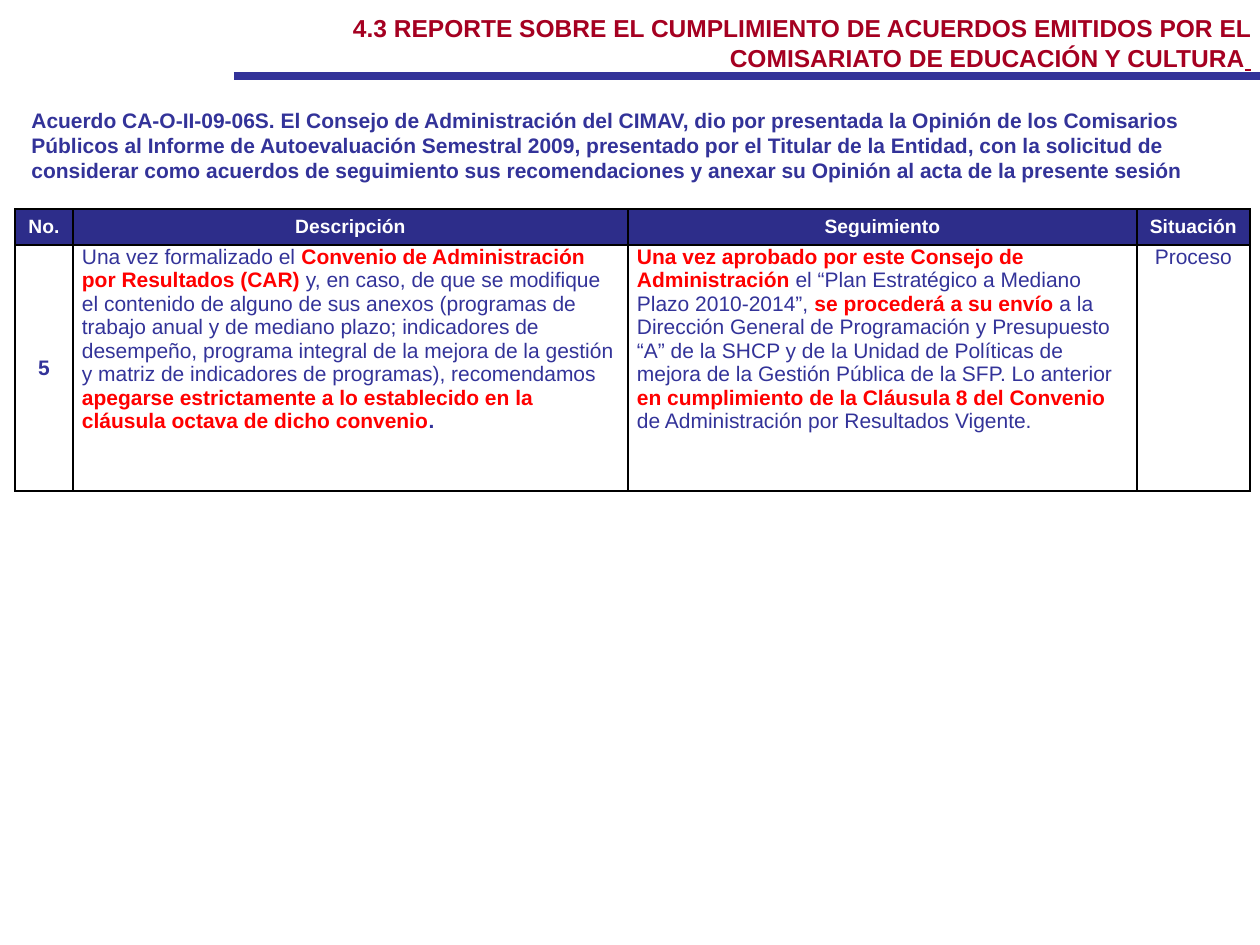
import pptx
import pptx.util
import pptx.dml.color
import pptx.enum.shapes
import pptx.enum.text
import pptx.oxml.ns
from lxml import etree

PX = 914400 / 126
NAVY, HEADER_BLUE, RED, WINE = "333399", "2D2D8A", "FF0000", "A50021"
WHITE, BLACK = "FFFFFF", "000000"
ALIGN = pptx.enum.text.PP_ALIGN
ANCHOR = pptx.enum.text.MSO_ANCHOR

TITLE = ("4.3 REPORTE SOBRE EL CUMPLIMIENTO DE ACUERDOS EMITIDOS POR EL "
         "COMISARIATO DE EDUCACIÓN Y CULTURA")
AGREEMENT = (
    "Acuerdo CA-O-II-09-06S. El Consejo de Administración del CIMAV, dio por "
    "presentada la Opinión de los Comisarios Públicos al Informe de Autoevaluación "
    "Semestral 2009, presentado por el Titular de la Entidad, con la solicitud de "
    "considerar como acuerdos de seguimiento sus recomendaciones y anexar su Opinión "
    "al acta de la presente sesión")
HEADINGS = ["No.", "Descripción", "Seguimiento", "Situación"]
KEY = {"bold": True, "color": RED}
DESCRIPTION = [
    ("Una vez formalizado el ", {}),
    ("Convenio de Administración por Resultados (CAR) ", KEY),
    ("y, en caso, de que se modifique el contenido de alguno de sus anexos (programas "
     "de trabajo anual y de mediano plazo; indicadores de desempeño, programa integral "
     "de la mejora de la gestión y matriz de indicadores de programas), recomendamos ", {}),
    ("apegarse estrictamente a lo establecido en la cláusula octava de dicho convenio", KEY),
    (".", {"bold": True}),
]
FOLLOW_UP = [
    ("Una vez aprobado por este Consejo de Administración", KEY),
    (" el “Plan Estratégico a Mediano Plazo 2010-2014”, ", {}),
    ("se procederá a su envío ", KEY),
    ("a la Dirección General de Programación y Presupuesto “A” de la SHCP y de la "
     "Unidad de Políticas de mejora de la Gestión Pública de la SFP. Lo anterior ", {}),
    ("en cumplimiento de la Cláusula 8 del Convenio ", KEY),
    ("de Administración por Resultados Vigente.", {}),
]


def px(length):
    return pptx.util.Emu(round(length * PX))


def rgb(color):
    return pptx.dml.color.RGBColor.from_string(color)


def add_run(paragraph, text, size=12, color=NAVY, bold=False, underline=False):
    run = paragraph.add_run()
    run.text = text
    run.font.name = "Arial"
    run.font.size = pptx.util.Pt(size)
    run.font.color.rgb = rgb(color)
    run.font.bold = bold
    run.font.underline = underline


def write(frame, runs, align=ALIGN.LEFT, **style):
    """Fill the first paragraph with (text, changes to the style) runs."""
    paragraph = frame.paragraphs[0]
    paragraph.alignment = align
    for text, changes in runs:
        add_run(paragraph, text, **{**style, **changes})


def add_text(slide, box, runs, anchor=ANCHOR.TOP, **style):
    frame = slide.shapes.add_textbox(*map(px, box)).text_frame
    frame.word_wrap = True
    frame.vertical_anchor = anchor
    write(frame, runs, **style)


def add_rule(slide, left, right, y):
    rule = slide.shapes.add_connector(
        pptx.enum.shapes.MSO_CONNECTOR.STRAIGHT, px(left), px(y), px(right), px(y))
    rule.line.color.rgb = rgb(NAVY)
    rule.line.width = pptx.util.Pt(4.5)
    properties = rule._element.spPr
    etree.SubElement(properties, pptx.oxml.ns.qn("a:effectLst"))


def set_borders(cell):
    properties = cell._tc.get_or_add_tcPr()
    qn = pptx.oxml.ns.qn
    for index, side in enumerate(("lnL", "lnR", "lnT", "lnB")):
        line = etree.Element(qn("a:" + side), w=str(pptx.util.Pt(1)))
        fill = etree.SubElement(line, qn("a:solidFill"))
        etree.SubElement(fill, qn("a:srgbClr"), val=BLACK)
        properties.insert(index, line)


def fill_cell(cell, runs, anchor=ANCHOR.TOP, fill=None, **style):
    if fill:
        cell.fill.solid()
        cell.fill.fore_color.rgb = rgb(fill)
    else:
        cell.fill.background()
        cell.margin_left = cell.margin_right = px(9)
        cell.margin_top = cell.margin_bottom = 0
    cell.vertical_anchor = anchor
    set_borders(cell)
    write(cell.text_frame, runs, **style)


def add_agreement_table(slide):
    widths, heights = [58, 555, 509, 113], [36, 246]
    table = slide.shapes.add_table(
        len(heights), len(widths), px(15), px(209), px(sum(widths)), px(sum(heights))).table
    for column, width in zip(table.columns, widths):
        column.width = px(width)
    for row, height in zip(table.rows, heights):
        row.height = px(height)
    for index, heading in enumerate(HEADINGS):
        fill_cell(table.cell(0, index), [(heading, {})], anchor=ANCHOR.MIDDLE,
                  fill=HEADER_BLUE, align=ALIGN.CENTER, size=11, color=WHITE, bold=True)
    fill_cell(table.cell(1, 0), [("5", {})], anchor=ANCHOR.MIDDLE,
              align=ALIGN.CENTER, bold=True)
    fill_cell(table.cell(1, 1), DESCRIPTION)
    fill_cell(table.cell(1, 2), FOLLOW_UP)
    fill_cell(table.cell(1, 3), [("Proceso", {})], align=ALIGN.CENTER)


def main():
    presentation = pptx.Presentation()
    presentation.slide_width, presentation.slide_height = px(1260), px(945)
    slide = presentation.slides.add_slide(presentation.slide_layouts[6])
    add_rule(slide, 234, 1260, 76)
    add_text(slide, (19, 100, 1241, 90), [(AGREEMENT, {})],
             anchor=ANCHOR.MIDDLE, bold=True)
    add_agreement_table(slide)
    add_text(slide, (251, 7, 1013, 72), [(TITLE, {}), (" ", {"underline": True})],
             align=ALIGN.RIGHT, size=14, color=WINE, bold=True)
    presentation.save("out.pptx")


if __name__ == "__main__":
    main()
